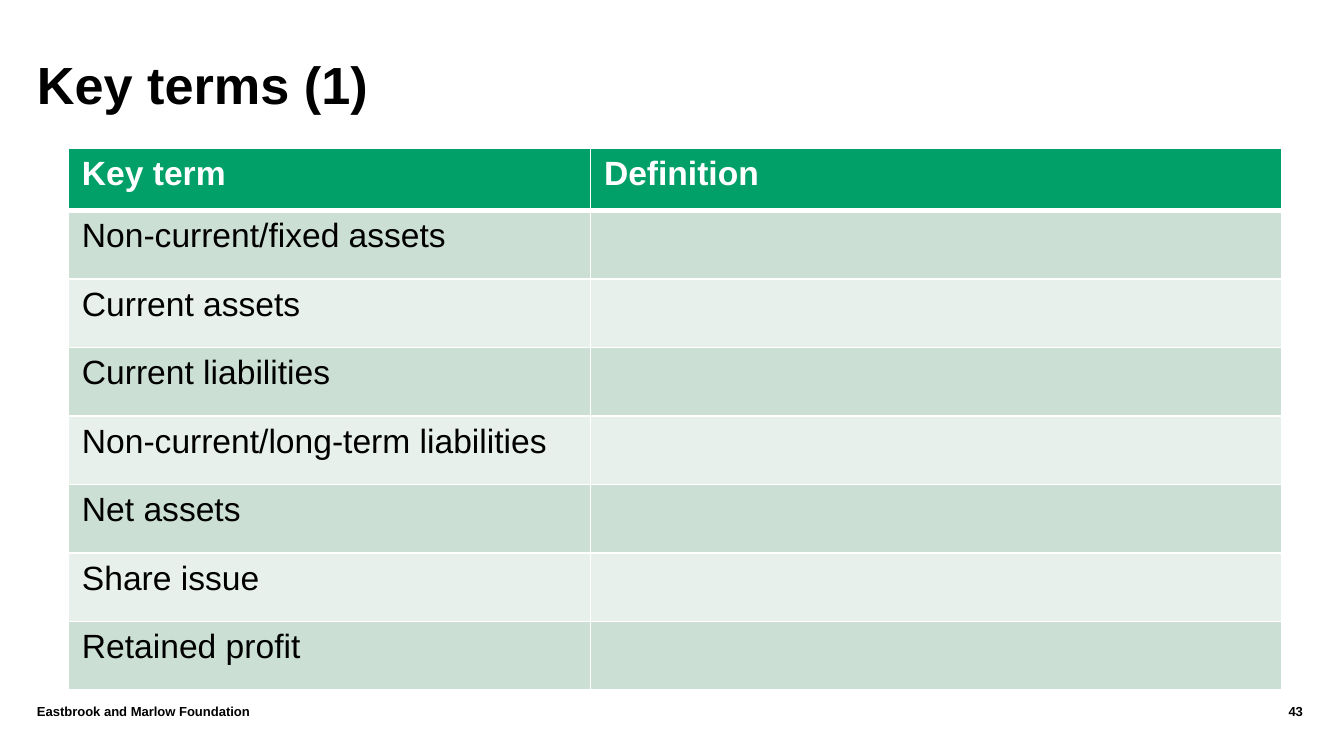
from dataclasses import dataclass

from lxml import etree
from pptx import Presentation
from pptx.dml.color import RGBColor
from pptx.enum.text import MSO_ANCHOR, MSO_AUTO_SIZE, PP_ALIGN
from pptx.oxml.ns import qn
from pptx.util import Emu, Pt

LEFT, RIGHT = PP_ALIGN.LEFT, PP_ALIGN.RIGHT
TOP = MSO_ANCHOR.TOP
NO_AUTOFIT = MSO_AUTO_SIZE.NONE
TITLE_ONLY = 5
EMU_PER_PX = 4572  # 200 px to the inch


@dataclass(frozen=True)
class Theme:
    font: str = "Arial"
    text: str = "000000"
    white: str = "FFFFFF"
    header: str = "00A068"
    bands: tuple = ("CCDFD4", "E7F0EB")
    title_size: int = 28
    table_size: int = 18
    footer_size: int = 7
    line_spacing: float = 1.2
    border: int = 1
    header_rule: int = 3


THEME = Theme()

TERMS = [
    "Non-current/fixed assets",
    "Current assets",
    "Current liabilities",
    "Non-current/long-term liabilities",
    "Net assets",
    "Share issue",
    "Retained profit",
]


def px(n):
    return Emu(n * EMU_PER_PX)


def add_run(p, text, size, color, bold):
    r = p.add_run()
    r.text = text
    r.font.name = THEME.font
    r.font.size = Pt(size)
    r.font.bold = bold
    r.font.color.rgb = RGBColor.from_string(color)


def fill_text(sp, text, size, align=LEFT):
    """Put one bold line into a frame without insets."""
    tf = sp.text_frame
    tf.word_wrap = True
    tf.auto_size = NO_AUTOFIT
    tf.vertical_anchor = TOP
    tf.margin_left = tf.margin_top = tf.margin_right = tf.margin_bottom = 0
    p = tf.paragraphs[0]
    p.alignment = align
    p.line_spacing = THEME.line_spacing
    add_run(p, text, size, THEME.text, True)


def set_title(s, text, x, y, w, h):
    sp = s.shapes.title
    sp.left, sp.top, sp.width, sp.height = map(px, (x, y, w, h))
    fill_text(sp, text, THEME.title_size)


def add_footer(s, text, x, y, w, h, align=LEFT):
    sp = s.shapes.add_textbox(px(x), px(y), px(w), px(h))
    fill_text(sp, text, THEME.footer_size, align)


def set_borders(cell, top, bottom):
    """Draw white cell borders; they must precede the fill in tcPr."""
    tc_pr = cell._tc.get_or_add_tcPr()
    widths = {"lnL": THEME.border, "lnR": THEME.border, "lnT": top, "lnB": bottom}
    for i, (tag, width) in enumerate(widths.items()):
        ln = etree.Element(qn(f"a:{tag}"), w=str(Pt(width)))
        solid = etree.SubElement(ln, qn("a:solidFill"))
        etree.SubElement(solid, qn("a:srgbClr"), val=THEME.white)
        tc_pr.insert(i, ln)


def style_cell(cell, text, row):
    is_header = row == 0
    fill = THEME.header if is_header else THEME.bands[(row - 1) % 2]
    color = THEME.white if is_header else THEME.text
    cell.fill.solid()
    cell.fill.fore_color.rgb = RGBColor.from_string(fill)
    p = cell.text_frame.paragraphs[0]
    if text:
        add_run(p, text, THEME.table_size, color, is_header)
    else:
        p.font.size = Pt(THEME.table_size)
    set_borders(
        cell,
        top=THEME.header_rule if row == 1 else THEME.border,
        bottom=THEME.header_rule if is_header else THEME.border,
    )


def add_terms_table(s, rows, x, y, col_widths, header_h, row_h):
    heights = [header_h] + [row_h] * (len(rows) - 1)
    table = s.shapes.add_table(
        len(rows), len(col_widths), px(x), px(y), px(sum(col_widths)), px(sum(heights))
    ).table
    for col, width in zip(table.columns, col_widths):
        col.width = px(width)
    for i, (texts, height) in enumerate(zip(rows, heights)):
        table.rows[i].height = px(height)
        for j, text in enumerate(texts):
            style_cell(table.cell(i, j), text, i)


def main():
    prs = Presentation()
    prs.slide_width, prs.slide_height = px(2000), px(1125)
    s = prs.slides.add_slide(prs.slide_layouts[TITLE_ONLY])

    # Title
    set_title(s, "Key terms (1)", 55, 59, 1884, 138)

    # Page number and organisation
    add_footer(s, "43", 1740, 1042, 199, 60, RIGHT)
    add_footer(s, "Eastbrook and Marlow Foundation", 55, 1042, 1685, 60)

    # Terms with blank definitions
    rows = [("Key term", "Definition")] + [(term, "") for term in TERMS]
    add_terms_table(s, rows, 102, 220, (777, 1028), 93, 102)

    prs.save("out.pptx")


if __name__ == "__main__":
    main()
